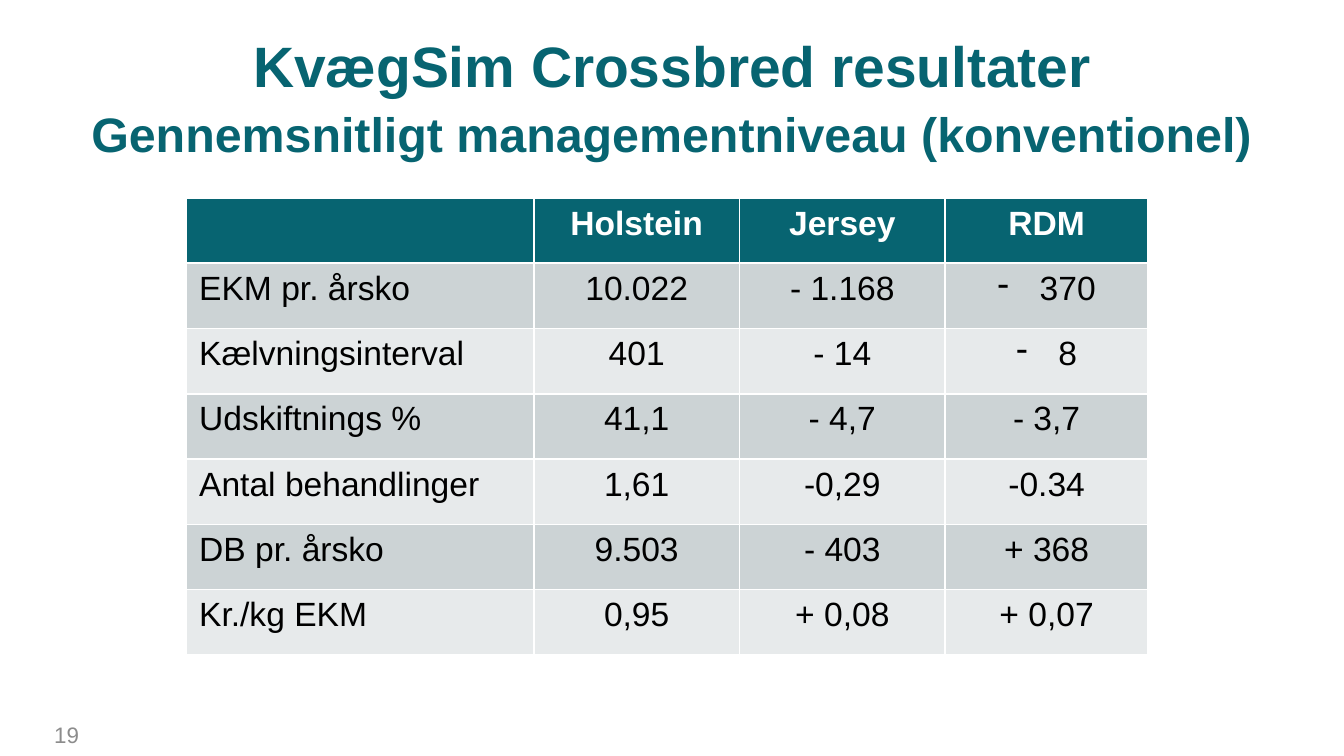
from lxml.etree import SubElement
from pptx import Presentation
from pptx.dml.color import RGBColor
from pptx.enum.text import MSO_ANCHOR, MSO_AUTO_SIZE, PP_ALIGN
from pptx.oxml.ns import qn
from pptx.util import Pt

TEAL, WHITE, BLACK, GREY = "076471", "FFFFFF", "000000", "8C8C8C"
BAND_FILLS = ("CCD3D5", "E7EAEB")
COLUMN_WIDTHS = (186.5, 110.2, 110.2, 108.7)
ROW_HEIGHT = 35
DASH_INDENT = 22.5
TITLE_LINES = (
    ("KvægSim Crossbred resultater", 30.5),
    ("Gennemsnitligt managementniveau (konventionel)", 25.9),
)
ROWS = (
    ("", "Holstein", "Jersey", "RDM"),
    ("EKM pr. årsko", "10.022", "- 1.168", "370"),
    ("Kælvningsinterval", "401", "- 14", "8"),
    ("Udskiftnings %", "41,1", "- 4,7", "- 3,7"),
    ("Antal behandlinger", "1,61", "-0,29", "-0.34"),
    ("DB pr. årsko", "9.503", "- 403", "+ 368"),
    ("Kr./kg EKM", "0,95", "+ 0,08", "+ 0,07"),
)
DASH_BULLET_CELLS = {(1, 3), (2, 3)}


def color(hex_value):
    return RGBColor.from_string(hex_value)


def set_attributes(target, values):
    for name, value in values.items():
        setattr(target, name, value)


def write_paragraph(paragraph, text, size, text_color, alignment, bold=False):
    paragraph.alignment = alignment
    run = paragraph.add_run()
    run.text = text
    set_attributes(run.font, {"name": "Arial", "size": Pt(size), "bold": bold})
    run.font.color.rgb = color(text_color)


def add_dash_bullet(paragraph):
    properties = paragraph._p.get_or_add_pPr()
    properties.set("marL", str(Pt(DASH_INDENT)))
    properties.set("indent", str(-Pt(DASH_INDENT)))
    SubElement(properties, qn("a:buChar")).set("char", "-")


def add_title(slide):
    title = slide.shapes.title
    set_attributes(title, {"left": Pt(36), "top": Pt(15),
                           "width": Pt(648), "height": Pt(68)})
    frame = title.text_frame
    set_attributes(frame, {
        "auto_size": MSO_AUTO_SIZE.NONE, "word_wrap": True,
        "vertical_anchor": MSO_ANCHOR.MIDDLE,
        "margin_top": Pt(5), "margin_bottom": 0,
    })
    for index, (text, size) in enumerate(TITLE_LINES):
        paragraph = frame.add_paragraph() if index else frame.paragraphs[0]
        paragraph.space_before = Pt(3 if index else 0)
        write_paragraph(paragraph, text, size, TEAL, PP_ALIGN.CENTER, True)


def add_results_table(slide):
    table = slide.shapes.add_table(
        len(ROWS), len(COLUMN_WIDTHS), Pt(99.5), Pt(106),
        Pt(sum(COLUMN_WIDTHS)), Pt(ROW_HEIGHT * len(ROWS))).table
    for column, width in zip(table.columns, COLUMN_WIDTHS):
        column.width = Pt(width)
    for row_index, values in enumerate(ROWS):
        header = row_index == 0
        fill = TEAL if header else BAND_FILLS[(row_index - 1) % 2]
        for column_index, text in enumerate(values):
            cell = table.cell(row_index, column_index)
            cell.fill.solid()
            cell.fill.fore_color.rgb = color(fill)
            if not text:
                continue
            paragraph = cell.text_frame.paragraphs[0]
            if (row_index, column_index) in DASH_BULLET_CELLS:
                add_dash_bullet(paragraph)
            write_paragraph(
                paragraph, text, 18, WHITE if header else BLACK,
                PP_ALIGN.CENTER if column_index else PP_ALIGN.LEFT, header)


def add_page_number(slide, number):
    box = slide.shapes.add_textbox(Pt(0), Pt(383), Pt(49.5), Pt(21.5))
    box.text_frame.word_wrap = True
    write_paragraph(box.text_frame.paragraphs[0], number, 12, GREY, PP_ALIGN.RIGHT)


def main():
    presentation = Presentation()
    set_attributes(presentation, {"slide_width": Pt(720), "slide_height": Pt(405)})
    slide = presentation.slides.add_slide(presentation.slide_layouts[5])
    add_page_number(slide, "19")
    add_results_table(slide)
    add_title(slide)
    presentation.save("out.pptx")


if __name__ == "__main__":
    main()
